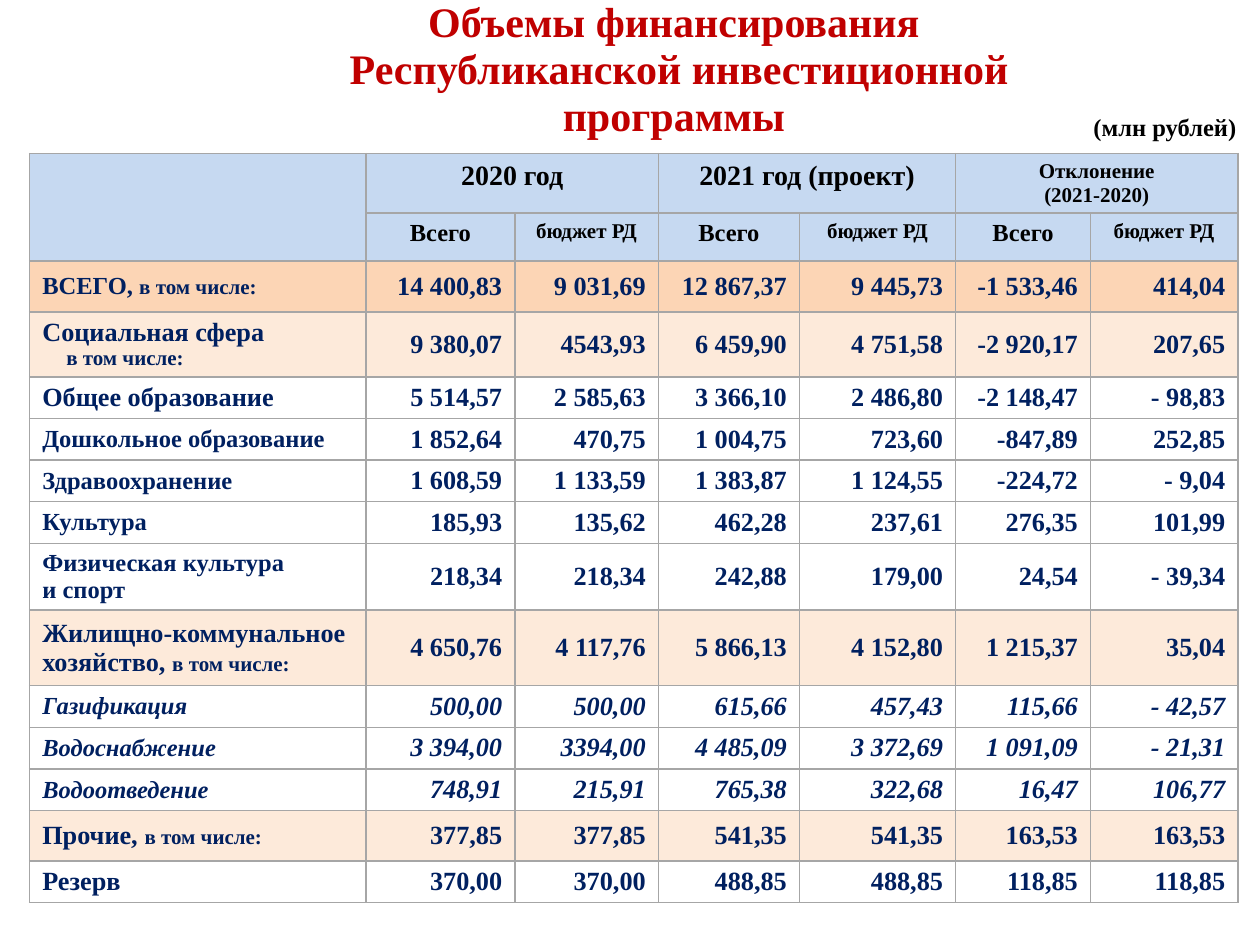
from dataclasses import dataclass
from typing import NamedTuple

from lxml import etree
from pptx import Presentation
from pptx import util as u
from pptx.dml.color import RGBColor
from pptx.enum import text
from pptx.oxml import ns


@dataclass(frozen=True)
class Theme:
    font: str = "Times New Roman"
    title_color: str = "C00000"
    header_color: str = "000000"
    body_color: str = "002060"
    border: str = "A6A6A6"
    header_fill: str = "C6D9F1"
    total_fill: str = "FCD5B5"
    section_fill: str = "FDEADA"
    plain_fill: str = "FFFFFF"
    title: int = 24
    heading: int = 16
    value: int = 15
    label: int = 14
    small: int = 12


class Piece(NamedTuple):
    text: str
    size: int


class Line(NamedTuple):
    pieces: tuple[Piece, ...]
    indent: float = 0


class BudgetRow(NamedTuple):
    height: float
    fill: str
    lines: tuple[Line, ...]
    values: str
    italic: bool = False


THEME = Theme()
WIDTH, HEIGHT = u.Inches(10), u.Inches(7.5)
COLUMNS = (26.7, 11.8, 11.4, 11.2, 12.4, 10.7, 11.7)
HEADER_ROWS = (6.27, 5.07)
TABLE_TOP = 16.27
PLAIN_ROW = 4.4
LEFT, CENTER, RIGHT = text.PP_ALIGN.LEFT, text.PP_ALIGN.CENTER, text.PP_ALIGN.RIGHT
TOP, MIDDLE = text.MSO_ANCHOR.TOP, text.MSO_ANCHOR.MIDDLE


def across(percent: float) -> int:
    return round(WIDTH * percent / 100)


def down(percent: float) -> int:
    return round(HEIGHT * percent / 100)


def line(content: str, size: int, indent: float = 0) -> Line:
    return Line((Piece(content, size),), indent)


def section(name: str) -> Line:
    return Line((Piece(name, THEME.value), Piece("в том числе:", THEME.small)))


def plain(name: str, values: str, size: int = THEME.label, italic: bool = False) -> BudgetRow:
    return BudgetRow(PLAIN_ROW, THEME.plain_fill, (line(name, size),), values, italic)


BUDGET = (
    BudgetRow(5.4, THEME.total_fill,
              (Line((Piece("ВСЕГО, ", THEME.label), Piece("в том числе:", THEME.small))),),
              "14 400,83|9 031,69|12 867,37|9 445,73|-1 533,46|414,04"),
    BudgetRow(6.8, THEME.section_fill,
              (line("Социальная сфера", THEME.value), line("в том числе:", THEME.small, 1.9)),
              "9 380,07|4543,93|6 459,90|4 751,58|-2 920,17|207,65"),
    plain("Общее образование", "5 514,57|2 585,63|3 366,10|2 486,80|-2 148,47|- 98,83", THEME.value),
    plain("Дошкольное образование", "1 852,64|470,75|1 004,75|723,60|-847,89|252,85"),
    plain("Здравоохранение", "1 608,59|1 133,59|1 383,87|1 124,55|-224,72|- 9,04"),
    plain("Культура", "185,93|135,62|462,28|237,61|276,35|101,99"),
    BudgetRow(7.07, THEME.plain_fill,
              (line("Физическая культура", THEME.label), line("и спорт", THEME.label)),
              "218,34|218,34|242,88|179,00|24,54|- 39,34"),
    BudgetRow(8, THEME.section_fill, (section("Жилищно-коммунальное хозяйство, "),),
              "4 650,76|4 117,76|5 866,13|4 152,80|1 215,37|35,04"),
    plain("Газификация", "500,00|500,00|615,66|457,43|115,66|- 42,57", italic=True),
    plain("Водоснабжение", "3 394,00|3394,00|4 485,09|3 372,69|1 091,09|- 21,31", italic=True),
    plain("Водоотведение", "748,91|215,91|765,38|322,68|16,47|106,77", italic=True),
    BudgetRow(5.33, THEME.section_fill, (section("Прочие, "),),
              "377,85|377,85|541,35|541,35|163,53|163,53"),
    plain("Резерв", "370,00|370,00|488,85|488,85|118,85|118,85", THEME.value),
)
PERIODS = (
    (line("2020 год", THEME.heading),),
    (line("2021 год (проект)", THEME.heading),),
    (line("Отклонение", THEME.small), line("(2021-2020)", THEME.small)),
)
MEASURES = (line("Всего", THEME.label), line("бюджет РД", THEME.small))


def style_font(font, color: str, size: int, italic: bool) -> None:
    font.name, font.size, font.bold, font.italic = THEME.font, u.Pt(size), True, italic
    font.color.rgb = RGBColor.from_string(color)


def write(frame, lines: tuple[Line, ...], color: str, alignment, italic: bool = False) -> None:
    for index, entry in enumerate(lines):
        paragraph = frame.add_paragraph() if index else frame.paragraphs[0]
        paragraph.alignment = alignment
        style_font(paragraph.font, color, entry.pieces[0].size, italic)
        if entry.indent:
            properties = paragraph._p.get_or_add_pPr()
            properties.set("marL", str(across(entry.indent)))
            properties.set("indent", "0")
        for piece in entry.pieces:
            run = paragraph.add_run()
            run.text = piece.text
            style_font(run.font, color, piece.size, italic)


def paint_cell(cell, fill: str, anchor) -> None:
    properties = cell._tc.get_or_add_tcPr()
    for side in ("lnL", "lnR", "lnT", "lnB"):
        border = etree.SubElement(properties, ns.qn(f"a:{side}"), w=str(u.Pt(1)))
        solid = etree.SubElement(border, ns.qn("a:solidFill"))
        etree.SubElement(solid, ns.qn("a:srgbClr"), val=THEME.border)
    cell.fill.solid()
    cell.fill.fore_color.rgb = RGBColor.from_string(fill)
    cell.vertical_anchor = anchor


def add_budget_table(slide) -> None:
    heights = HEADER_ROWS + tuple(row.height for row in BUDGET)
    shape = slide.shapes.add_table(len(heights), len(COLUMNS), across(2.36), down(TABLE_TOP),
                                   across(sum(COLUMNS)), down(sum(heights)))
    table = shape.table
    table.first_row = table.horz_banding = False
    for column, width in zip(table.columns, COLUMNS):
        column.width = across(width)
    for row, height in zip(table.rows, heights):
        row.height = down(height)

    header_count = len(HEADER_ROWS)
    for row in range(header_count):
        for column in range(len(COLUMNS)):
            paint_cell(table.cell(row, column), THEME.header_fill, TOP)
        corner = table.cell(row, 0)
        corner.margin_top = corner.margin_bottom = 0
    table.cell(0, 0).merge(table.cell(1, 0))
    for index, period in enumerate(PERIODS):
        start = 1 + index * len(MEASURES)
        table.cell(0, start).merge(table.cell(0, start + 1))
        write(table.cell(0, start).text_frame, period, THEME.header_color, CENTER)
        for offset, measure in enumerate(MEASURES):
            write(table.cell(1, start + offset).text_frame, (measure,), THEME.header_color, CENTER)

    for index, entry in enumerate(BUDGET, start=header_count):
        values = ((line(value, THEME.value),) for value in entry.values.split("|"))
        for column, lines in enumerate((entry.lines, *values)):
            cell = table.cell(index, column)
            paint_cell(cell, entry.fill, MIDDLE)
            write(cell.text_frame, lines, THEME.body_color, RIGHT if column else LEFT, entry.italic)


def add_text(slide, left: float, top: float, width: float, height: float,
             lines: tuple[Line, ...], color: str, alignment, wrap: bool):
    box = slide.shapes.add_textbox(across(left), down(top), across(width), down(height))
    box.text_frame.word_wrap = wrap
    write(box.text_frame, lines, color, alignment)
    return box.text_frame


def main() -> None:
    presentation = Presentation()
    presentation.slide_width, presentation.slide_height = WIDTH, HEIGHT
    slide = presentation.slides.add_slide(presentation.slide_layouts[6])
    add_budget_table(slide)
    title = add_text(slide, 17.6, 0, 72.6, TABLE_TOP, (
        line("Объемы финансирования ", THEME.title),
        line("Республиканской инвестиционной программы ", THEME.title),
    ), THEME.title_color, CENTER, True)
    title.margin_top = title.margin_bottom = 0
    for paragraph in title.paragraphs:
        paragraph.line_spacing = 0.93
    add_text(slide, 85.8, 11.2, 14.2, 4.53, (line("(млн рублей)", THEME.label),),
             THEME.header_color, LEFT, False)
    presentation.save("out.pptx")


if __name__ == "__main__":
    main()
